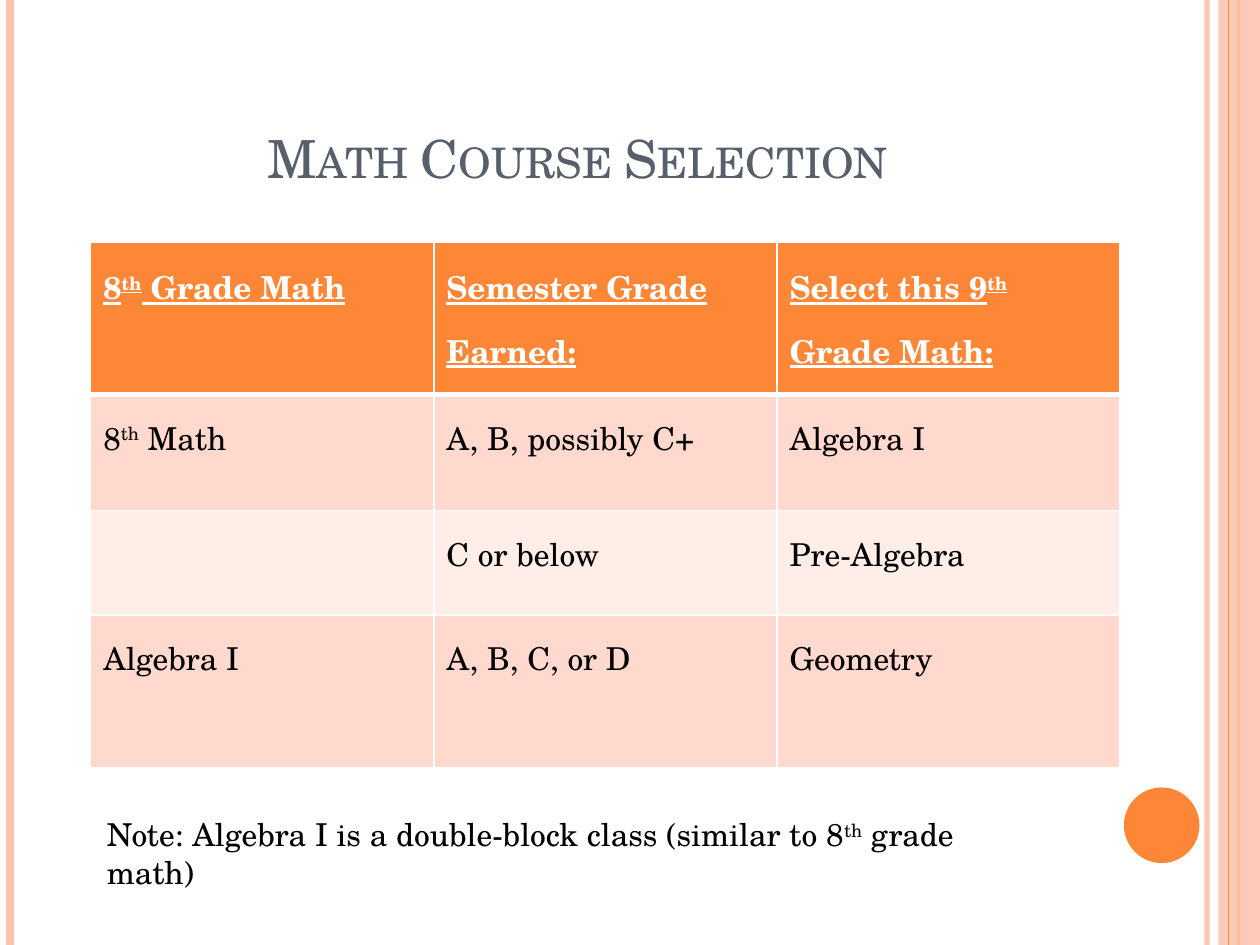
from dataclasses import dataclass
from lxml.etree import SubElement
from pptx import Presentation
from pptx.dml.color import RGBColor
from pptx.enum.shapes import MSO_CONNECTOR as Connector, MSO_SHAPE as Shape
from pptx.enum.text import MSO_ANCHOR as Anchor, PP_ALIGN as Align
from pptx.oxml.ns import qn
from pptx.util import Inches, Pt


@dataclass(frozen=True)
class Theme:
    font: str = "TeX Gyre Schola"
    title_size: int = 30
    body_size: int = 18
    title: str = "575F6D"
    text: str = "000000"
    white: str = "FFFFFF"
    accent: str = "FE8637"
    stripe: str = "FEC3AE"
    bands: tuple = ("FFD9CE", "FFEDE8")


THEME = Theme()
WIDTH, HEIGHT = 10, 7.5

# A "^" on either side marks superscript text
COURSES = [
    ["8^th^ Grade Math", "Semester Grade Earned:", "Select this 9^th^ Grade Math:"],
    ["8^th^ Math", "A, B, possibly C+", "Algebra I"],
    ["", "C or below", "Pre-Algebra"],
    ["Algebra I", "A, B, C, or D", "Geometry"],
]
COLUMN_WIDTH = 8.17 / 3
ROW_HEIGHTS = [1.21, 0.92, 0.83, 1.21]
NOTE = "Note: Algebra I is a double-block class (similar to 8^th^ grade math)"


def rgb(color):
    return RGBColor.from_string(color)


def set_alpha(fill_parent, percent):
    color = next(fill_parent.iter(qn("a:srgbClr")))
    SubElement(color, qn("a:alpha"), val=str(percent * 1000))


def add_runs(paragraph, marked_text, color=THEME.text, size=THEME.body_size, heading=False):
    for index, part in enumerate(marked_text.split("^")):
        if not part:
            continue
        run = paragraph.add_run()
        run.text = part
        font = run.font
        font.name, font.size = THEME.font, Pt(size)
        font.bold = font.underline = heading
        font.color.rgb = rgb(color)
        if index % 2:
            font._element.set("baseline", "30000")


def add_rule(slide, x, color, weight, alpha=None):
    """Draw a full-height vertical line."""
    rule = slide.shapes.add_connector(
        Connector.STRAIGHT, Inches(x), 0, Inches(x), Inches(HEIGHT))
    rule.line.color.rgb = rgb(color)
    rule.line.width = Pt(weight)
    properties = rule._element.spPr
    if alpha:
        set_alpha(properties, alpha)
    SubElement(properties, qn("a:effectLst"))


def add_block(slide, kind, box, color, alpha=None):
    block = slide.shapes.add_shape(kind, *map(Inches, box))
    block.shadow.inherit = False
    block.fill.solid()
    block.fill.fore_color.rgb = rgb(color)
    block.line.fill.background()
    if alpha:
        set_alpha(block._element.spPr, alpha)


def add_decoration(slide):
    add_rule(slide, 9.58, THEME.stripe, 3, alpha=93)
    add_rule(slide, 0.08, THEME.stripe, 4.5)
    add_rule(slide, 9.83, THEME.accent, 1.5)
    add_block(slide, Shape.RECTANGLE, (9.67, 0, 0.33, HEIGHT), THEME.stripe, alpha=87)
    add_rule(slide, 9.75, THEME.accent, 0.75)
    add_block(slide, Shape.OVAL, (8.92, 6.25, 0.6, 0.6), THEME.accent)


def set_title(slide, text):
    title = slide.shapes.title
    title.left, title.top, title.width, title.height = map(Inches, (0.5, 0.3, 8.17, 1.25))
    title.text_frame.vertical_anchor = Anchor.BOTTOM
    heading = title.text_frame.paragraphs[0]
    heading.alignment = Align.CENTER
    add_runs(heading, text, THEME.title, THEME.title_size)
    heading.runs[0].font._element.set("cap", "small")


def style_cell(cell, fill, borders):
    properties = cell._tc.get_or_add_tcPr()
    for side, weight in borders.items():
        border = SubElement(properties, qn(f"a:ln{side}"), w=str(Pt(weight)))
        solid = SubElement(border, qn("a:solidFill"))
        SubElement(solid, qn("a:srgbClr"), val=THEME.white)
    cell.fill.solid()
    cell.fill.fore_color.rgb = rgb(fill)


def add_course_table(slide):
    frame = slide.shapes.add_table(
        len(COURSES), len(COURSES[0]), Inches(0.72), Inches(1.92),
        Inches(COLUMN_WIDTH * 3), Inches(sum(ROW_HEIGHTS)))
    table = frame.table
    for column in table.columns:
        column.width = Inches(COLUMN_WIDTH)
    for r, (texts, height) in enumerate(zip(COURSES, ROW_HEIGHTS)):
        table.rows[r].height = Inches(height)
        header = r == 0
        fill = THEME.accent if header else THEME.bands[(r - 1) % 2]
        borders = {"L": 1, "R": 1, "T": 3 if r == 1 else 1, "B": 3 if header else 1}
        for c, text in enumerate(texts):
            cell = table.cell(r, c)
            style_cell(cell, fill, borders)
            paragraph = cell.text_frame.paragraphs[0]
            paragraph.line_spacing = 1.3
            paragraph.space_before = Pt(3)
            add_runs(paragraph, text, THEME.white if header else THEME.text, heading=header)


def add_note(slide):
    note = slide.shapes.add_textbox(*map(Inches, (0.75, 6.42, 7.5, 0.71)))
    note.text_frame.word_wrap = True
    add_runs(note.text_frame.paragraphs[0], NOTE)


def main():
    deck = Presentation()
    deck.slide_width, deck.slide_height = Inches(WIDTH), Inches(HEIGHT)
    slide = deck.slides.add_slide(deck.slide_layouts[5])
    add_decoration(slide)
    set_title(slide, "Math Course Selection")
    add_course_table(slide)
    add_note(slide)
    deck.save("out.pptx")


if __name__ == "__main__":
    main()
